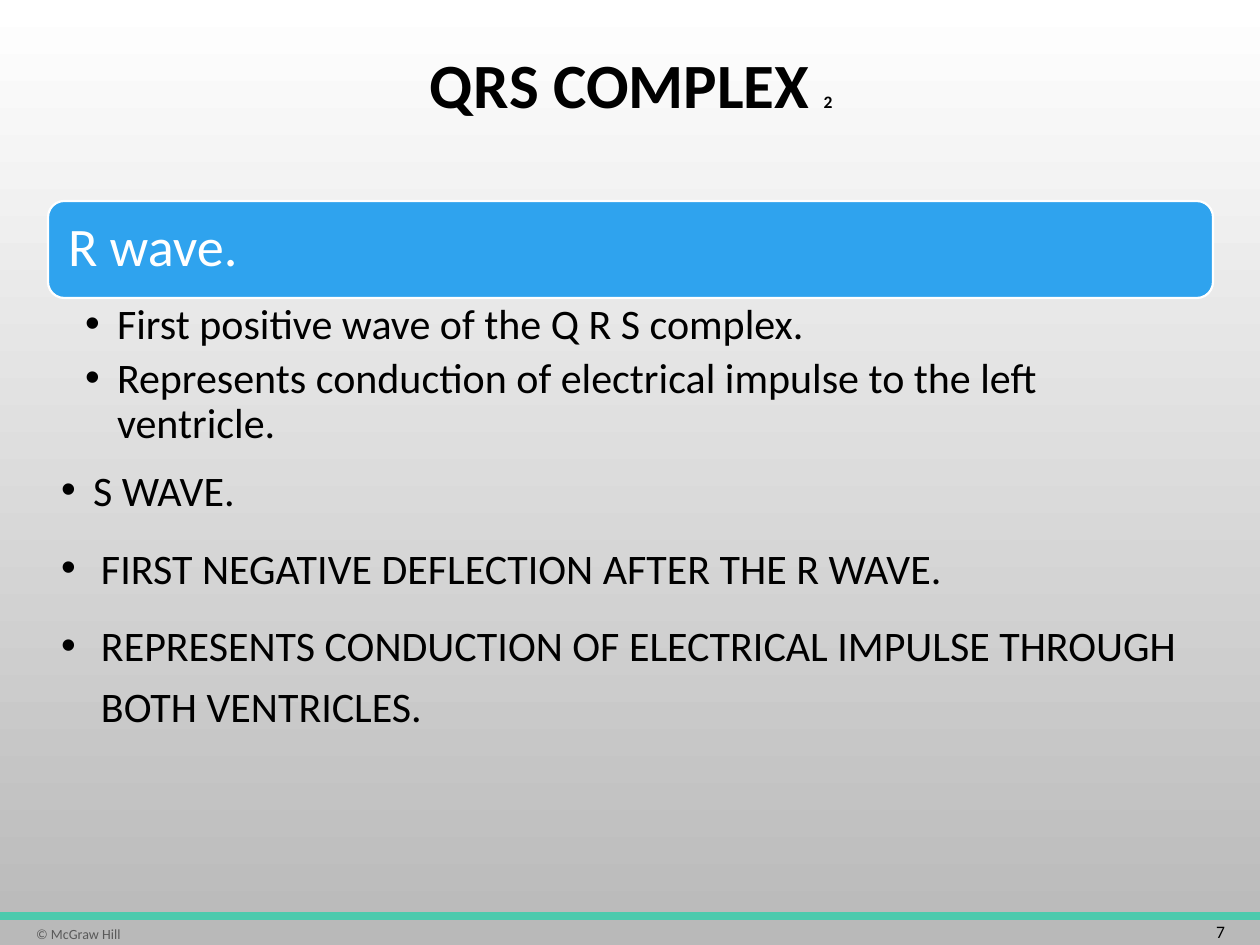
from lxml.etree import SubElement as Sub
from pptx import Presentation as Deck
from pptx.dml.color import RGBColor as Rgb
from pptx.enum.shapes import MSO_SHAPE as Kind
from pptx.enum.text import MSO_ANCHOR as Anchor, PP_ALIGN as Align
from pptx.oxml.ns import qn
from pptx.util import Emu, Pt

HUES = {"ink": "000000", "white": "FFFFFF", "grey": "B9B9B9", "note": "595959",
        "blue": "2FA3EE", "teal": "4BCAAD"}


class Page:
    """Slide with its style and one method for each kind of element."""

    font = "Calibri"
    scale = 914400 / 126

    def __init__(self, deck):
        deck.slide_width, deck.slide_height = self.emu(1260), self.emu(945)
        self.slide = deck.slides.add_slide(deck.slide_layouts[6])

    def emu(self, px):
        return Emu(round(px * self.scale))

    def hue(self, name):
        return Rgb.from_string(HUES[name])

    def back(self, top, base):
        fill = self.slide.background.fill
        fill.gradient()
        fill.gradient_angle = 270
        for stop, name in zip(fill.gradient_stops, (top, base)):
            stop.color.rgb = self.hue(name)

    def shape(self, kind, box, fill, edge=None):
        item = self.slide.shapes.add_shape(kind, *map(self.emu, box))
        item.shadow.inherit = False
        item.fill.solid()
        item.fill.fore_color.rgb = self.hue(fill)
        if edge:
            item.line.color.rgb = self.hue(edge)
            item.line.width = Pt(1.25)
        else:
            item.line.fill.background()
        return item

    def frame(self, box, pad=(13, 6, 13, 6), anchor=Anchor.MIDDLE):
        frame = self.slide.shapes.add_textbox(*map(self.emu, box)).text_frame
        frame.word_wrap = True
        frame.vertical_anchor = anchor
        (frame.margin_left, frame.margin_top,
         frame.margin_right, frame.margin_bottom) = map(self.emu, pad)
        return frame

    def style(self, run, size, hue="ink", bold=False):
        run.font.name, run.font.size, run.font.bold = self.font, Pt(size), bold
        run.font.color.rgb = self.hue(hue)

    def text(self, box, parts, hue="ink", bold=False, align=Align.LEFT,
             lead=1.0, **opts):
        para = self.frame(box, **opts).paragraphs[0]
        para.alignment, para.line_spacing = align, lead
        for words, size in parts:
            run = para.add_run()
            run.text = words
            self.style(run, size, hue, bold)

    def bullets(self, box, rows, size, lead, before=0, after=0, level=0, **opts):
        frame = self.frame(box, anchor=Anchor.TOP, **opts)
        frame.text = "\n".join(words for words, _ in rows)
        for spot, (para, (_, dent)) in enumerate(zip(frame.paragraphs, rows)):
            para.level = level
            props = para._p.get_or_add_pPr()
            props.set("marL", str(self.emu(dent)))
            props.set("indent", str(-self.emu(dent)))
            Sub(props, qn("a:buFont"), typeface="Arial")
            Sub(props, qn("a:buChar"), char="•")
            para.line_spacing = lead
            para.space_before = Pt(before if spot else 0)
            para.space_after = Pt(after)
            self.style(para.runs[0], size)


def main():
    deck = Deck()
    page = Page(deck)
    page.back("white", "grey")
    page.shape(Kind.RECTANGLE, (0, 912, 1260, 8), "teal")
    page.text((30, 919, 170, 29), [("© McGraw Hill", 8)], "note", pad=(6, 6, 6, 6))
    page.text((48, 26, 1166, 125),
              [("Q", 36), (" ", 1), ("R", 36), (" ", 1), ("S COMPLEX ", 36), ("2", 10)],
              bold=True, align=Align.CENTER, lead=0.9)
    page.shape(Kind.ROUNDED_RECTANGLE, (48, 201, 1165, 97), "blue", "white")
    page.text((52, 205, 1155, 88), [("R wave.", 31)], "white", lead=0.9,
              pad=(16, 16, 16, 16))
    page.bullets((48, 298, 1165, 103), [
        ("First positive wave of the Q R S complex.", 32),
        ("Represents conduction of electrical impulse to the left ventricle.", 32),
    ], 24, 0.9, after=5, level=1, pad=(37, 5, 30, 5))
    page.bullets((48, 448, 1166, 413), [
        ("S WAVE.", 32),
        ("FIRST NEGATIVE DEFLECTION AFTER THE R WAVE.", 40),
        ("REPRESENTS CONDUCTION OF ELECTRICAL IMPULSE THROUGH BOTH VENTRICLES.", 40),
    ], 24, 1.2, before=10)
    page.text((1188, 920, 50, 23), [("7", 10)], align=Align.RIGHT)
    deck.save("out.pptx")


if __name__ == "__main__":
    main()
